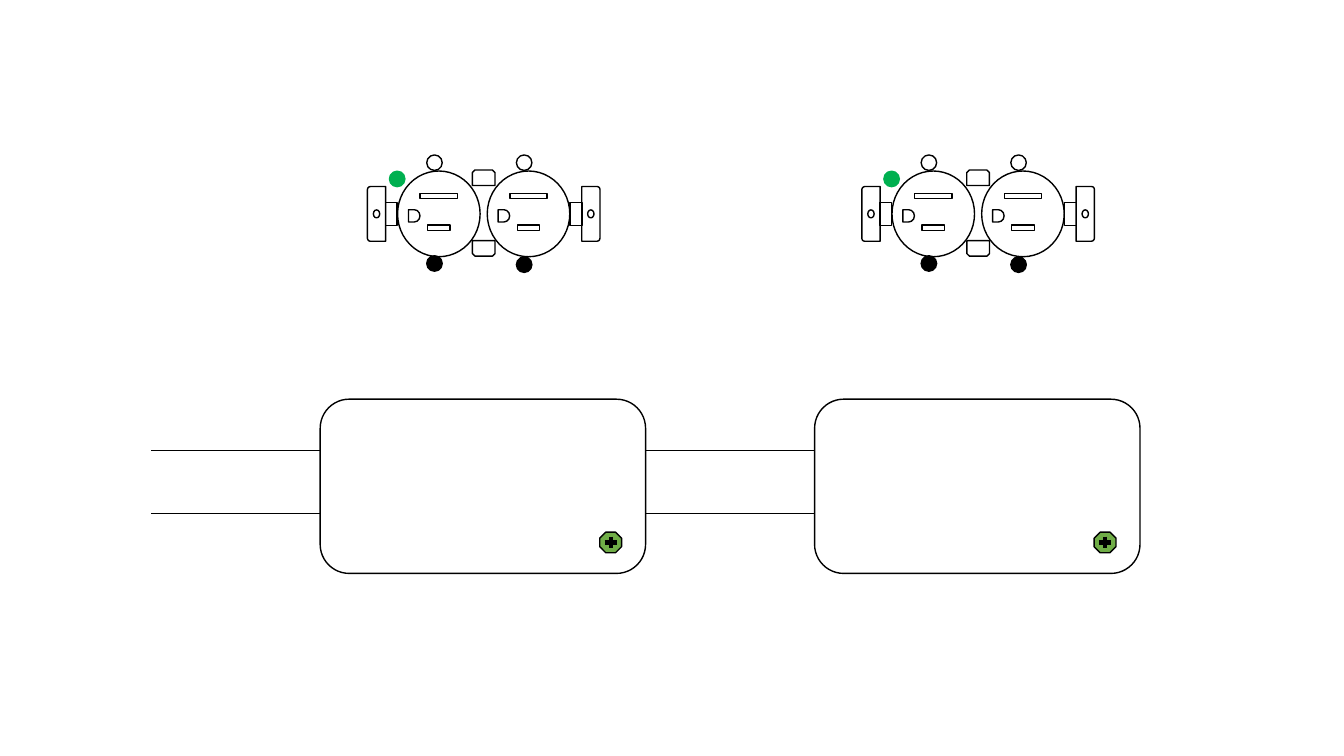
import pptx
import pptx.dml.color
import pptx.enum.shapes
import pptx.oxml
import pptx.util

Cm = pptx.util.Cm
Pt = pptx.util.Pt
SHAPE = pptx.enum.shapes.MSO_SHAPE

BLACK, GREEN, SCREW_GREEN = "000000", "00B050", "70AD47"

# Lengths in cm; x is measured from the left side of each box.
FIRST_BOX_LEFT = 8.07
BOX_PITCH = 12.46
BOX_TOP, BOX_WIDTH, BOX_HEIGHT = 10.06, 8.2, 4.39
CABLE_LENGTH = BOX_PITCH - BOX_WIDTH
CABLE_EDGES = [11.35, 12.93]

DUPLEX_X, DUPLEX_Y = 4.12, 5.39
STRAP_X, NECK_X = 2.7, 2.33  # either side of the duplex centre
SCREW_SIZE = 0.39
OUTLETS = [  # x from the duplex centre, y of the black screw
    (-1.13, 6.64),
    (1.13, 6.67),
]
OUTLET_PARTS = [  # kind, x from the outlet centre, y, width, height
    (SHAPE.OVAL, 0, DUPLEX_Y, 2.08, 2.16),
    (SHAPE.RECTANGLE, 0, 4.94, 0.94, 0.13),
    (SHAPE.RECTANGLE, 0, 5.74, 0.57, 0.13),
    (SHAPE.FLOWCHART_DELAY, -0.62, 5.44, 0.29, 0.31),
    (SHAPE.OVAL, -0.11, 4.1, SCREW_SIZE, SCREW_SIZE),
]
BREAK_TABS = [(4.48, 0), (6.26, 180)]  # y, rotation
GROUND_X, GROUND_Y, CROSS_ARM = 7.32, 13.67, 0.15


def color(hex_code):
    return pptx.dml.color.RGBColor.from_string(hex_code)


def place(group, kind, x, y, width, height, rotation=0, fill=None, line=BLACK):
    """Add a shape centred on x, y."""
    shape = group.shapes.add_shape(
        kind, Cm(x - width / 2), Cm(y - height / 2), Cm(width), Cm(height))
    shape.rotation = rotation
    shape.shadow.inherit = False
    if fill:
        shape.fill.solid()
        shape.fill.fore_color.rgb = color(fill)
    else:
        shape.fill.background()
    shape.line.color.rgb = color(line)
    shape.line.width = Pt(1)


def draw_line(group, x1, y1, x2, y2, weight):
    line = group.shapes.add_connector(
        pptx.enum.shapes.MSO_CONNECTOR.STRAIGHT, Cm(x1), Cm(y1), Cm(x2), Cm(y2))
    line.line.color.rgb = color(BLACK)
    line.line.width = Pt(weight)
    properties = line._element.spPr
    properties.append(pptx.oxml.parse_xml(
        '<a:effectLst xmlns:a="http://schemas.openxmlformats.org/drawingml/2006/main"/>'))


def draw_box(group, left):
    place(group, SHAPE.ROUNDED_RECTANGLE, left + BOX_WIDTH / 2,
          BOX_TOP + BOX_HEIGHT / 2, BOX_WIDTH, BOX_HEIGHT)
    for y in CABLE_EDGES:
        draw_line(group, left, y, left - CABLE_LENGTH, y, 0.5)


def draw_receptacle(group, center):
    for outlet_x, black_screw_y in OUTLETS:
        x = center + outlet_x
        for kind, dx, y, width, height in OUTLET_PARTS:
            place(group, kind, x + dx, y, width, height)
        place(group, SHAPE.OVAL, x - 0.11, black_screw_y,
              SCREW_SIZE, SCREW_SIZE, fill=BLACK)
    for side, rotation in [(1, 90), (-1, 270)]:
        strap = center + side * STRAP_X
        place(group, SHAPE.ROUND_2_SAME_RECTANGLE, strap, DUPLEX_Y, 1.38, 0.46, rotation)
        place(group, SHAPE.RECTANGLE, center + side * NECK_X, DUPLEX_Y, 0.3, 0.58)
        place(group, SHAPE.OVAL, strap, DUPLEX_Y, 0.16, 0.2)
    place(group, SHAPE.OVAL, center - 2.18, 4.51, SCREW_SIZE, SCREW_SIZE,
          fill=GREEN, line=GREEN)
    for y, rotation in BREAK_TABS:
        place(group, SHAPE.SNIP_2_SAME_RECTANGLE, center, y, 0.57, 0.39, rotation)


def draw_ground_screw(group, x, y):
    place(group, SHAPE.OCTAGON, x, y, 0.55, 0.52, fill=SCREW_GREEN)
    draw_line(group, x, y - CROSS_ARM, x, y + CROSS_ARM, 3)
    draw_line(group, x - CROSS_ARM, y, x + CROSS_ARM, y, 3)


def main():
    deck = pptx.Presentation()
    deck.slide_width, deck.slide_height = Cm(33.87), Cm(19.05)
    slide = deck.slides.add_slide(deck.slide_layouts[6])
    for position in (1, 0):
        left = FIRST_BOX_LEFT + position * BOX_PITCH
        group = slide.shapes.add_group_shape()
        draw_box(group, left)
        draw_receptacle(group, left + DUPLEX_X)
        draw_ground_screw(group, left + GROUND_X, GROUND_Y)
    deck.save("out.pptx")


if __name__ == "__main__":
    main()
